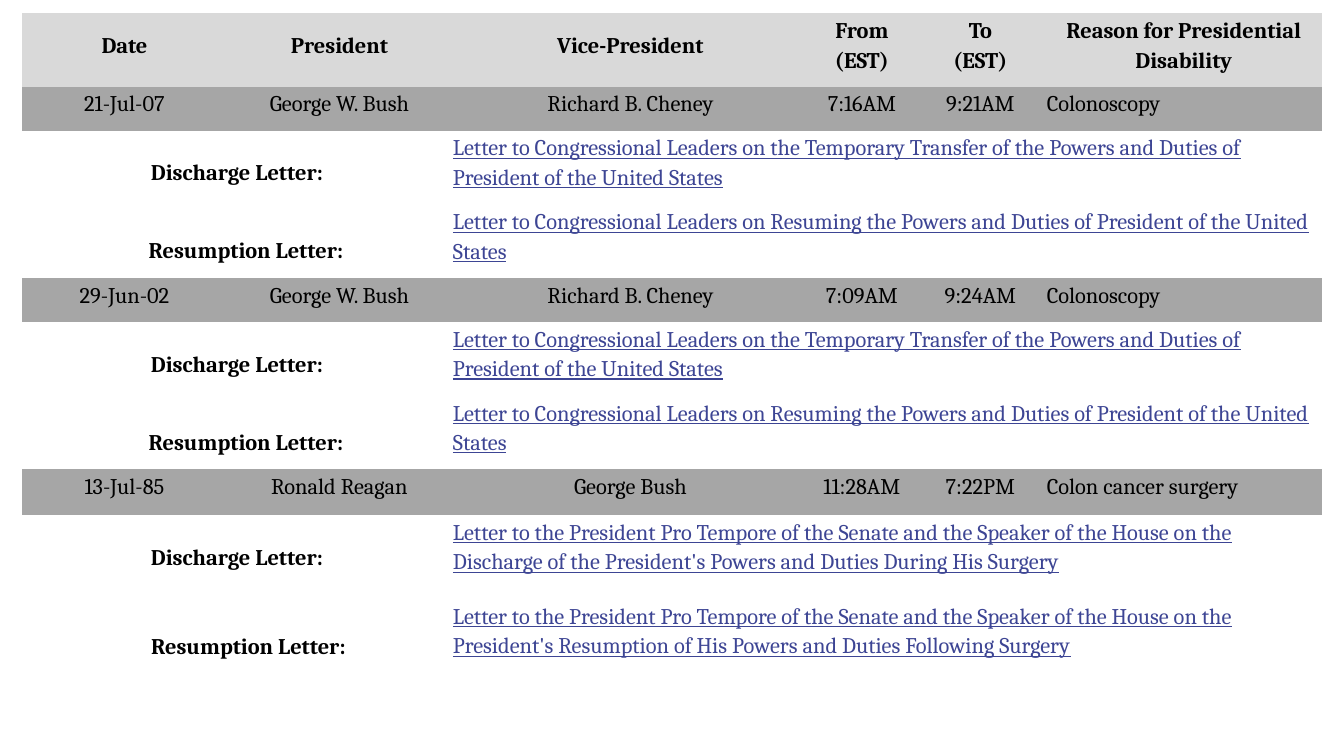
from dataclasses import dataclass

from pptx import Presentation
from pptx.dml.color import RGBColor
from pptx.enum.text import MSO_ANCHOR as Anchor, PP_ALIGN as Align
from pptx.oxml.ns import qn
from pptx.util import Emu, Pt

EMU_PER_PX = 914400 / 134.4
BLACK = RGBColor(0x00, 0x00, 0x00)
LINK = RGBColor(0x3D, 0x45, 0x94)
HEADER_FILL = RGBColor(0xD9, 0xD9, 0xD9)
EVENT_FILL = RGBColor(0xA6, 0xA6, 0xA6)
NO_GRID_STYLE = "{2D5ABB26-0587-4C30-8999-92F81FD0307C}"

COLUMNS = [205, 225, 357, 106, 131, 276]
HEADER_HEIGHT = 74
HEADINGS = ["Date", "President", "Vice-President", "From (EST)", "To\n(EST)",
            "Reason for Presidential Disability"]


@dataclass(frozen=True)
class Letter:
    label: str
    title: str
    height: int
    drop: int
    indent: int = 0


@dataclass(frozen=True)
class Transfer:
    facts: list[str]
    height: int
    letters: list[Letter]


def px(length: int) -> Emu:
    return Emu(round(length * EMU_PER_PX))


def bush_transfer(date: str, start: str, end: str) -> Transfer:
    prefix = "Letter to Congressional Leaders on "
    return Transfer(
        [date, "George W. Bush", "Richard B. Cheney", start, end, "Colonoscopy"], 44,
        [Letter("Discharge Letter:", prefix + "the Temporary Transfer of the Powers "
                "and Duties of President of the United States", 74, 26),
         Letter("Resumption Letter:", prefix + "Resuming the Powers and Duties of "
                "President of the United States", 73, 30, 18)])


def reagan_transfer() -> Transfer:
    prefix = ("Letter to the President Pro Tempore of the Senate and the Speaker "
              "of the House on the ")
    return Transfer(
        ["13-Jul-85", "Ronald Reagan", "George Bush", "11:28AM", "7:22PM",
         "Colon cancer surgery"], 46,
        [Letter("Discharge Letter:", prefix + "Discharge of the President's Powers "
                "and Duties During His Surgery", 84, 26),
         Letter("Resumption Letter:", prefix + "President's Resumption of His Powers "
                "and Duties Following Surgery", 84, 31, 23)])


TRANSFERS = [bush_transfer("21-Jul-07", "7:16AM", "9:21AM"),
             bush_transfer("29-Jun-02", "7:09AM", "9:24AM"),
             reagan_transfer()]


def write_cell(cell, text: str, fill: RGBColor | None = None, align=Align.CENTER,
               bold: bool = False, color: RGBColor = BLACK, underline: bool = False,
               top: int = 1, indent: int = 0) -> None:
    cell.margin_left = cell.margin_right = px(1)
    cell.margin_top, cell.margin_bottom = px(top), px(13)
    if fill is None:
        cell.fill.background()
    else:
        cell.fill.solid()
        cell.fill.fore_color.rgb = fill
    cell.text_frame.text = text
    for para in cell.text_frame.paragraphs:
        para.alignment = align
        para.line_spacing = 1.15
        if indent:
            para._p.get_or_add_pPr().set("marL", str(px(indent)))
        for span in para.runs:
            font = span.font
            font.name, font.size = "Cambria", Pt(12)
            font.bold, font.underline = bold, underline
            font.color.rgb = color


def write_letter(table, row: int, letter: Letter) -> None:
    """Fill a row that has a label over two columns and a link over four."""
    label, title = table.cell(row, 0), table.cell(row, 2)
    label.merge(table.cell(row, 1))
    title.merge(table.cell(row, 5))
    write_cell(label, letter.label, bold=True, top=letter.drop, indent=letter.indent)
    write_cell(title, letter.title, align=Align.LEFT, color=LINK, underline=True)


def add_plain_table(slide, heights: list[int]):
    frame = slide.shapes.add_table(len(heights), len(COLUMNS), px(22), px(13),
                                   px(sum(COLUMNS)), px(sum(heights)))
    table = frame.table
    table.horz_banding = table.first_row = False
    table._tbl.tblPr.find(qn("a:tableStyleId")).text = NO_GRID_STYLE
    for column, width in zip(table.columns, COLUMNS):
        column.width = px(width)
    for row, height in zip(table.rows, heights):
        row.height = px(height)
    return table


def main() -> None:
    deck = Presentation()
    deck.slide_width, deck.slide_height = px(1344), px(756)
    slide = deck.slides.add_slide(deck.slide_layouts[6])

    heights = [HEADER_HEIGHT]
    for transfer in TRANSFERS:
        heights += [transfer.height, *(letter.height for letter in transfer.letters)]
    table = add_plain_table(slide, heights)

    for column, heading in enumerate(HEADINGS):
        cell = table.cell(0, column)
        write_cell(cell, heading, HEADER_FILL, bold=True)
        cell.vertical_anchor = Anchor.MIDDLE

    row = 1
    for transfer in TRANSFERS:
        for column, fact in enumerate(transfer.facts):
            is_reason = column == len(COLUMNS) - 1
            write_cell(table.cell(row, column), fact, EVENT_FILL,
                       align=Align.LEFT if is_reason else Align.CENTER)
        for offset, letter in enumerate(transfer.letters, start=1):
            write_letter(table, row + offset, letter)
        row += 1 + len(transfer.letters)

    deck.save("out.pptx")


if __name__ == "__main__":
    main()
